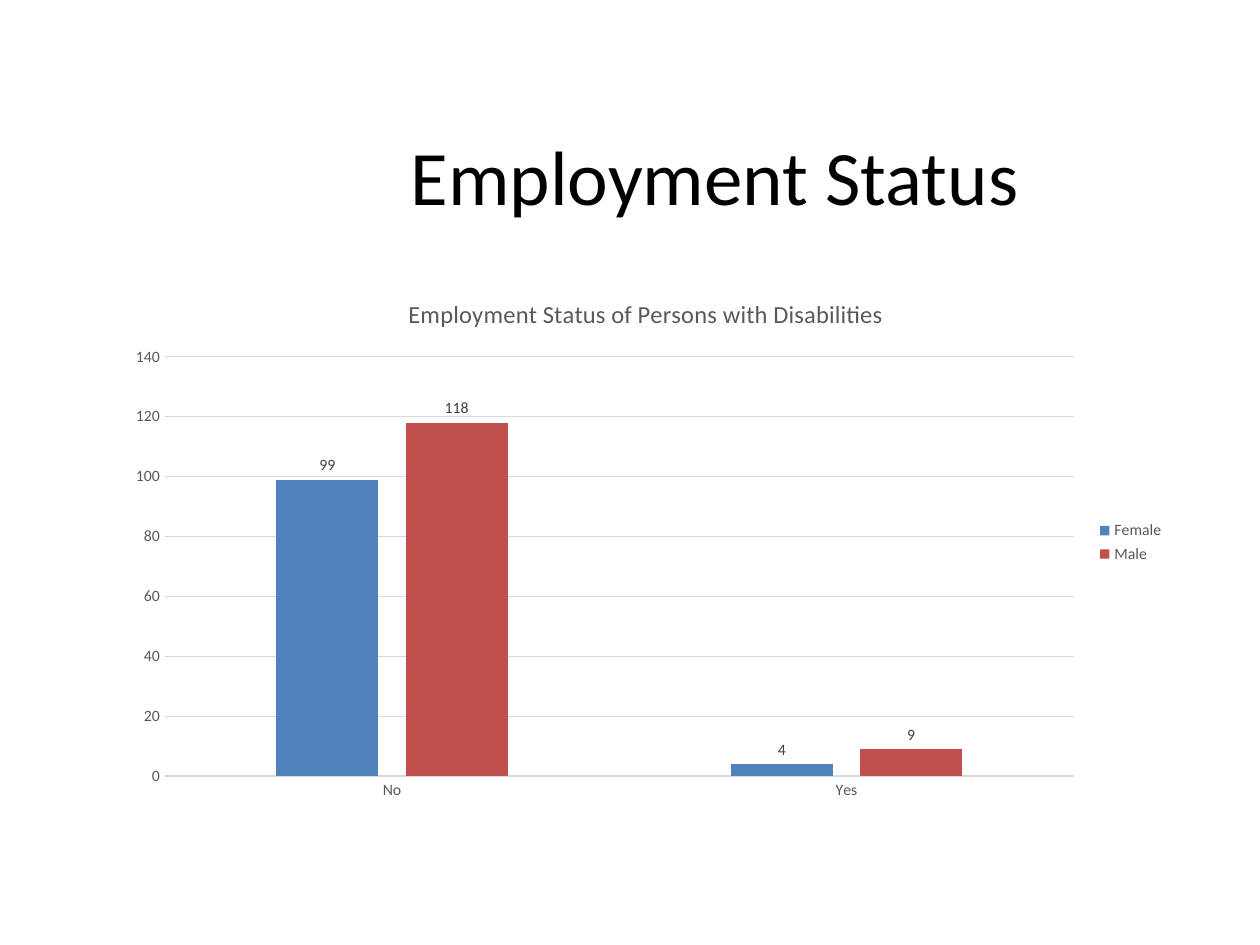
from pptx import Presentation
from pptx.chart.data import CategoryChartData
from pptx.dml.color import RGBColor
from pptx.enum.chart import XL_CHART_TYPE, XL_LABEL_POSITION, XL_LEGEND_POSITION, XL_TICK_MARK
from pptx.enum.text import MSO_ANCHOR, PP_ALIGN
from pptx.util import Inches, Pt

COLORS = {
    "title": "000000",
    "text": "595959",
    "label": "404040",
    "line": "D9D9D9",
    "Female": "4F81BD",
    "Male": "C0504D",
}


def set_font(font, size, color):
    font.name = "Calibri"
    font.size = Pt(size)
    font.bold = False
    font.color.rgb = RGBColor.from_string(COLORS[color])


def set_line(line):
    line.width = Pt(0.75)
    line.color.rgb = RGBColor.from_string(COLORS["line"])


deck = Presentation()
deck.slide_width, deck.slide_height = Inches(10), Inches(7.5)
page = deck.slides.add_slide(deck.slide_layouts[5])

# Slide title
title = page.shapes.title
title.left, title.top = Inches(1.85), Inches(0.76)
title.width, title.height = Inches(7.65), Inches(1.25)
title.text_frame.text = "Employment Status"
title.text_frame.vertical_anchor = MSO_ANCHOR.MIDDLE
para = title.text_frame.paragraphs[0]
para.alignment = PP_ALIGN.CENTER
set_font(para.runs[0].font, 44, "title")

# Column chart
data = CategoryChartData()
data.categories = ["No", "Yes"]
data.add_series("Female", (99, 4))
data.add_series("Male", (118, 9))
chart = page.shapes.add_chart(
    XL_CHART_TYPE.COLUMN_CLUSTERED,
    Inches(0.91), Inches(2.18), Inches(8.43), Inches(4.25), data,
).chart
set_font(chart.font, 10, "title")

chart.has_title = True
chart.chart_title.include_in_layout = False
heading = chart.chart_title.text_frame
heading.text = "Employment Status of Persons with Disabilities"
set_font(heading.paragraphs[0].runs[0].font, 14, "text")

chart.has_legend = True
chart.legend.position = XL_LEGEND_POSITION.RIGHT
chart.legend.include_in_layout = False
set_font(chart.legend.font, 9, "text")

for axis in (chart.category_axis, chart.value_axis):
    axis.major_tick_mark = XL_TICK_MARK.NONE
    axis.minor_tick_mark = XL_TICK_MARK.NONE
    set_font(axis.tick_labels.font, 9, "text")
set_line(chart.category_axis.format.line)
chart.value_axis.format.line.fill.background()
chart.value_axis.minimum_scale = 0
chart.value_axis.maximum_scale = 140
chart.value_axis.major_unit = 20
set_line(chart.value_axis.major_gridlines.format.line)

plot = chart.plots[0]
plot.vary_by_categories = False
plot.gap_width = 219
plot.overlap = -27
for series in plot.series:
    series.format.fill.solid()
    series.format.fill.fore_color.rgb = RGBColor.from_string(COLORS[series.name])
    labels = series.data_labels
    labels.show_value = True
    labels.position = XL_LABEL_POSITION.OUTSIDE_END
    set_font(labels.font, 9, "label")

deck.save("out.pptx")
